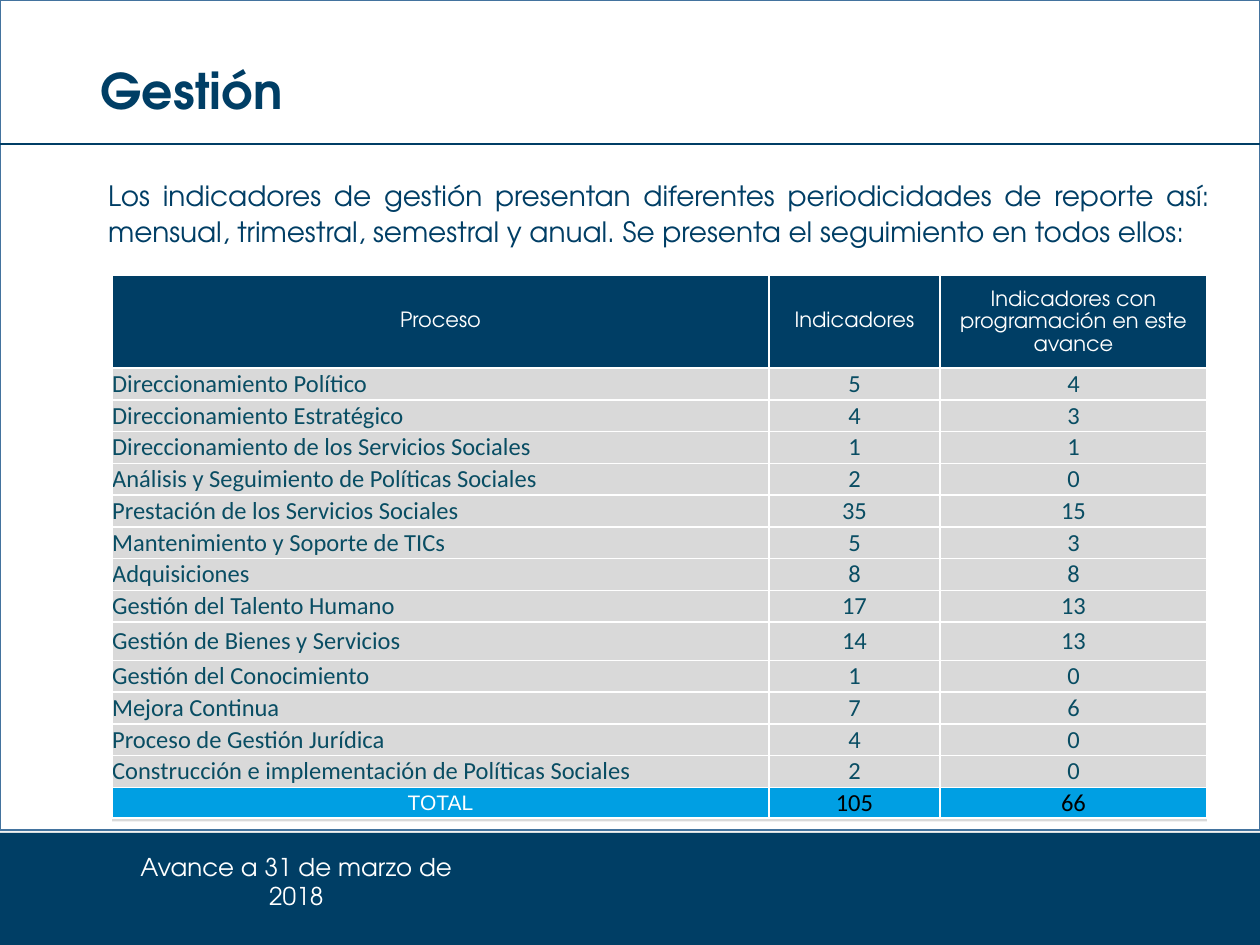
"""Builds the management indicators slide with its table by process."""
from dataclasses import dataclass

from lxml import etree
from pptx import Presentation
from pptx.dml.color import RGBColor
from pptx.enum.shapes import MSO_CONNECTOR, MSO_SHAPE
from pptx.enum.text import MSO_ANCHOR, PP_ALIGN
from pptx.oxml.ns import qn
from pptx.util import Cm, Pt

NAVY = RGBColor(0x00, 0x3E, 0x65)
TEAL = RGBColor(0x09, 0x4D, 0x63)
SKY = RGBColor(0x00, 0x9F, 0xE3)
FRAME_BLUE = RGBColor(0x43, 0x73, 0x9E)
LIGHT_GREY = RGBColor(0xF2, 0xF2, 0xF2)
GREY = RGBColor(0xD9, 0xD9, 0xD9)
WHITE = RGBColor(0xFF, 0xFF, 0xFF)
BLACK = RGBColor(0x00, 0x00, 0x00)

RECTANGLE = MSO_SHAPE.RECTANGLE
STRAIGHT = MSO_CONNECTOR.STRAIGHT
MIDDLE = MSO_ANCHOR.MIDDLE
LEFT, CENTER, JUSTIFY = PP_ALIGN.LEFT, PP_ALIGN.CENTER, PP_ALIGN.JUSTIFY

DISPLAY_FONT = "TeX Gyre Adventor"
TABLE_FONT = "Calibri"
PAGE_WIDTH, PAGE_HEIGHT = 25.4, 19.05
TABLE_LEFT, TABLE_TOP = 2.26, 5.54
COLUMN_WIDTHS = (13.24, 3.45, 5.38)
HEADER_HEIGHT, ROW_HEIGHT, TOTAL_HEIGHT = 1.88, 0.64, 0.62


@dataclass(frozen=True)
class Panel:
    left: float
    top: float
    width: float
    height: float
    fill: RGBColor
    outline: RGBColor | None = None


@dataclass(frozen=True)
class Process:
    name: str
    indicators: int
    scheduled: int
    height: float = ROW_HEIGHT


PANELS = (
    Panel(0, 0, PAGE_WIDTH, 18.87, LIGHT_GREY),
    Panel(0, 16.79, PAGE_WIDTH, 2.26, NAVY),
    Panel(0, 0, PAGE_WIDTH, 16.74, WHITE, FRAME_BLUE),
    Panel(TABLE_LEFT, TABLE_TOP, sum(COLUMN_WIDTHS), 11.02, GREY),
)
HEADINGS = ("Proceso", "Indicadores", "Indicadores con programación en este avance")
HEADING_SPACINGS = (1.07, 1.07, Pt(13))
PROCESSES = (
    Process("Direccionamiento Político", 5, 4),
    Process("Direccionamiento Estratégico", 4, 3),
    Process("Direccionamiento de los Servicios Sociales", 1, 1),
    Process("Análisis y Seguimiento de Políticas Sociales", 2, 0),
    Process("Prestación de los Servicios Sociales", 35, 15),
    Process("Mantenimiento y Soporte de TICs", 5, 3),
    Process("Adquisiciones", 8, 8),
    Process("Gestión del Talento Humano", 17, 13),
    Process("Gestión de Bienes y Servicios", 14, 13, 0.77),
    Process("Gestión del Conocimiento", 1, 0),
    Process("Mejora Continua", 7, 6),
    Process("Proceso de Gestión Jurídica", 4, 0),
    Process("Construcción e implementación de Políticas Sociales", 2, 0),
)


def write(frame, text: str, *, font: str = DISPLAY_FONT, size: float = 14,
          color: RGBColor = NAVY, bold: bool = False, align=CENTER, spacing=1.0) -> None:
    frame.word_wrap = True
    paragraph = frame.paragraphs[0]
    paragraph.alignment = align
    paragraph.line_spacing = spacing
    run = paragraph.add_run()
    run.text = text
    run.font.name = font
    run.font.size = Pt(size)
    run.font.bold = bold
    run.font.color.rgb = color


def add_panel(slide, panel: Panel) -> None:
    shape = slide.shapes.add_shape(RECTANGLE, Cm(panel.left), Cm(panel.top),
                                   Cm(panel.width), Cm(panel.height))
    shape.shadow.inherit = False
    shape.fill.solid()
    shape.fill.fore_color.rgb = panel.fill
    if panel.outline is None:
        shape.line.fill.background()
    else:
        shape.line.color.rgb = panel.outline
        shape.line.width = Pt(1)


def add_title_rule(slide) -> None:
    rule = slide.shapes.add_connector(STRAIGHT, Cm(PAGE_WIDTH), Cm(2.9), Cm(0), Cm(2.9))
    rule.line.color.rgb = NAVY
    rule.line.width = Pt(1)
    etree.SubElement(rule._element.spPr, qn("a:effectLst"))


def add_borders(cell, sides: str) -> None:
    properties = cell._tc.get_or_add_tcPr()
    for side in sides:
        border = etree.SubElement(properties, qn(f"a:ln{side}"), w=str(Pt(1)))
        fill = etree.SubElement(border, qn("a:solidFill"))
        etree.SubElement(fill, qn("a:srgbClr"), val=str(WHITE))


def fill_cell(cell, text: str, *, fill: RGBColor | None = None,
              side_margin: float = 0, borders: str = "LRTB", **text_format) -> None:
    cell.vertical_anchor = MIDDLE
    cell.margin_left = cell.margin_right = Cm(side_margin)
    cell.margin_top = cell.margin_bottom = Cm(0)
    add_borders(cell, borders)
    if fill is None:
        cell.fill.background()
    else:
        cell.fill.solid()
        cell.fill.fore_color.rgb = fill
    write(cell.text_frame, text, **text_format)


def add_process_table(slide) -> None:
    heights = (HEADER_HEIGHT, *(process.height for process in PROCESSES), TOTAL_HEIGHT)
    table = slide.shapes.add_table(
        len(heights), len(COLUMN_WIDTHS), Cm(TABLE_LEFT), Cm(TABLE_TOP),
        Cm(sum(COLUMN_WIDTHS)), Cm(sum(heights))).table
    table.first_row = table.horz_banding = False
    for column, width in zip(table.columns, COLUMN_WIDTHS):
        column.width = Cm(width)
    for row, height in zip(table.rows, heights):
        row.height = Cm(height)

    for column, (heading, spacing) in enumerate(zip(HEADINGS, HEADING_SPACINGS)):
        fill_cell(table.cell(0, column), heading, fill=NAVY, side_margin=0.13,
                  size=12, color=WHITE, spacing=spacing)

    for row, process in enumerate(PROCESSES, start=1):
        fill_cell(table.cell(row, 0), process.name, borders="RTB",
                  font=TABLE_FONT, color=TEAL, align=LEFT)
        for column, count in enumerate((process.indicators, process.scheduled), start=1):
            fill_cell(table.cell(row, column), str(count), font=TABLE_FONT, color=TEAL)

    last = len(heights) - 1
    fill_cell(table.cell(last, 0), "TOTAL", fill=SKY, side_margin=0.13, borders="RT",
              font="Arial", size=12, color=WHITE, spacing=1.07)
    totals = (sum(process.indicators for process in PROCESSES),
              sum(process.scheduled for process in PROCESSES))
    for column, total in enumerate(totals, start=1):
        fill_cell(table.cell(last, column), str(total), fill=SKY, borders="LRT",
                  font=TABLE_FONT, color=BLACK)


def main() -> None:
    presentation = Presentation()
    presentation.slide_width, presentation.slide_height = Cm(PAGE_WIDTH), Cm(PAGE_HEIGHT)
    slide = presentation.slides.add_slide(presentation.slide_layouts[5])
    for panel in PANELS:
        add_panel(slide, panel)

    cutoff = slide.shapes.add_textbox(Cm(2.2), Cm(17.05), Cm(7.55), Cm(1.5))
    write(cutoff.text_frame, "Avance a 31 de marzo de 2018", color=WHITE)
    introduction = slide.shapes.add_textbox(Cm(1.93), Cm(3.43), Cm(22.73), Cm(1.73))
    write(introduction.text_frame,
          "Los indicadores de gestión presentan diferentes periodicidades de reporte así: "
          "mensual, trimestral, semestral y anual. Se presenta el seguimiento en todos ellos:",
          size=16, align=JUSTIFY, spacing=1.07)

    title = slide.shapes.title
    title.left, title.top, title.width, title.height = Cm(1.78), Cm(0.97), Cm(21.9), Cm(1.7)
    title.text_frame.vertical_anchor = MIDDLE
    write(title.text_frame, "Gestión", size=28, bold=True, align=LEFT)
    slide.shapes._spTree.append(title._element)

    add_title_rule(slide)
    add_process_table(slide)
    presentation.save("out.pptx")


if __name__ == "__main__":
    main()
